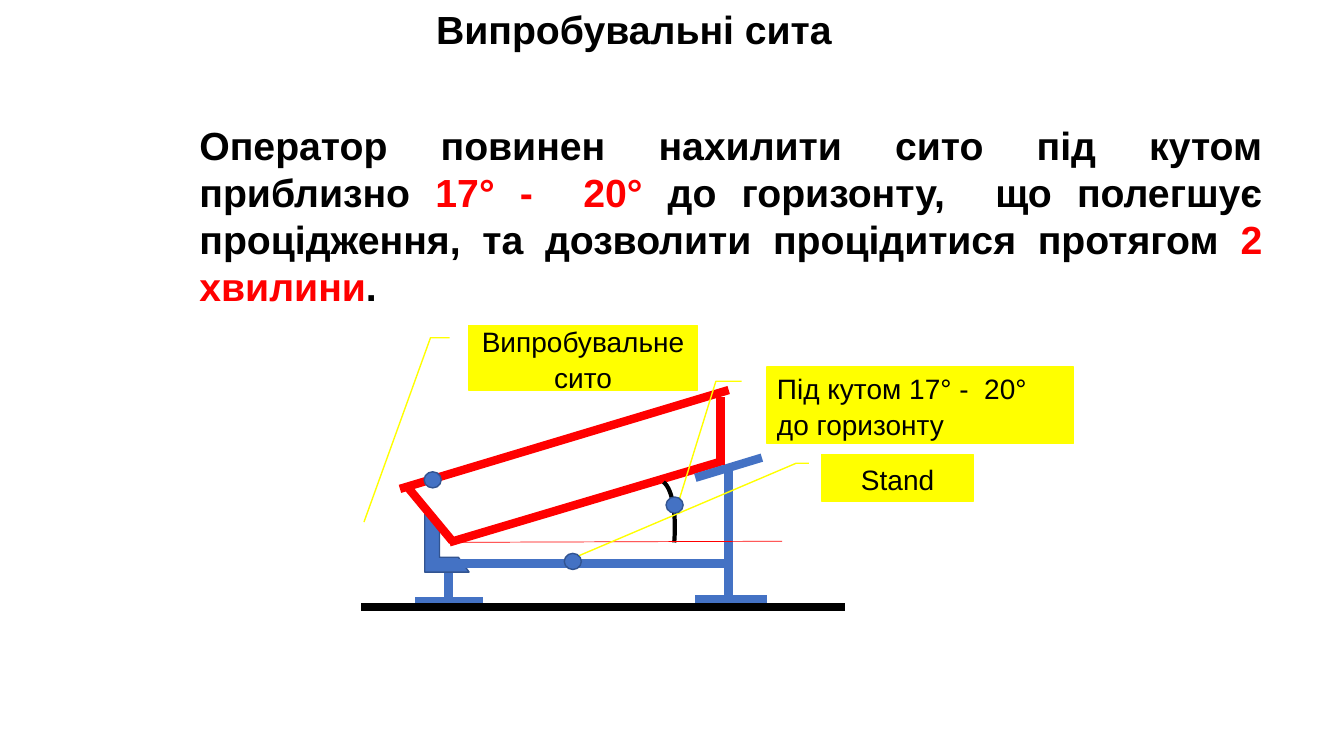
from lxml import etree
from pptx import Presentation
from pptx.dml.color import RGBColor
from pptx.enum import shapes, text
from pptx.oxml.ns import qn
from pptx.util import Pt

BLACK, RED, BLUE, NAVY, YELLOW = "000000", "FF0000", "4472C4", "325491", "FFFF00"
KIND, ALIGN = shapes.MSO_SHAPE, text.PP_ALIGN


def color(value):
    return RGBColor.from_string(value)


def apply_format(target, values):
    for name, value in values.items():
        setattr(target, name, value)


def write(frame, spans, size, bold, values):
    """Fill a text frame with one paragraph of (wording, colour) spans."""
    frame.word_wrap = True
    para = frame.paragraphs[0]
    apply_format(para, values)
    for wording, ink in spans:
        span = para.add_run()
        span.text = wording
        apply_format(span.font, {"name": "Arial", "size": Pt(size), "bold": bold})
        span.font.color.rgb = color(ink)


def add_text(page, box, spans, align):
    label = page.shapes.add_textbox(*map(Pt, box))
    write(label.text_frame, spans, 28, True, {"alignment": align})
    label.text_frame.auto_size = text.MSO_AUTO_SIZE.SHAPE_TO_FIT_TEXT


def add_shape(page, kind, box, fill, line, width=1, turn=0, adjust=()):
    shape = page.shapes.add_shape(kind, *map(Pt, box))
    shape.shadow.inherit = False
    shape.rotation = turn
    for index, value in enumerate(adjust):
        shape.adjustments[index] = value
    if fill:
        shape.fill.solid()
        shape.fill.fore_color.rgb = color(fill)
    else:
        shape.fill.background()
    shape.line.color.rgb = color(line)
    shape.line.width = Pt(width)
    return shape


def add_line(page, origin, ends, ink, width):
    left, top = origin
    x1, y1, x2, y2 = ends
    line = page.shapes.add_connector(
        shapes.MSO_CONNECTOR.STRAIGHT,
        Pt(left + x1), Pt(top + y1), Pt(left + x2), Pt(top + y2))
    line.line.color.rgb = color(ink)
    line.line.width = Pt(width)
    etree.SubElement(line._element.spPr, qn("a:effectLst"))


def add_apparatus(page, origin):
    left, top = origin
    # Bracket under the low end of the sieve
    add_shape(page, KIND.HALF_FRAME, (left + 39.4, top + 92.8, 43.9, 31.7),
              BLUE, NAVY, turn=270)
    # Stand, sieve and table, from back to front
    bars = [
        (BLUE, (69.6, 124.5, 262.6, 124.5)),   # crossbar
        (BLUE, (262.6, 53.9, 262.6, 149)),     # column
        (BLUE, (62.4, 131, 62.4, 149)),        # short leg
        (BLUE, (86.9, 151.1, 38.6, 151.1)),    # left foot
        (BLUE, (289.9, 149.7, 238.8, 149.7)),  # right foot
        (RED, (65.3, 108.6, 34.3, 71.2)),      # sieve, low end
        (RED, (256.8, 51.8, 63.1, 109.4)),     # sieve, underside
        (BLUE, (286.3, 48.9, 238.8, 63.3)),    # sieve rest
        (RED, (256.8, 5.7, 256.8, 53.9)),      # sieve, high end
        (RED, (262.6, 0.6, 27.8, 71.2)),       # sieve, top
        (BLACK, (0, 155.4, 345.4, 155.4)),     # table
    ]
    for ink, ends in bars:
        add_line(page, origin, ends, ink, 6)
    # Tilt angle and horizon
    add_shape(page, KIND.ARC, (left + 189.8, top + 64.7, 33.1, 103.7),
              None, BLACK, 3, 7.7, (163.958, 198.162))
    add_line(page, origin, (65.3, 109.4, 300.7, 108.6), RED, 0.5)


def add_callout(page, box, wording, align, tip):
    callout = add_shape(page, KIND.LINE_CALLOUT_2, box, YELLOW, YELLOW,
                        adjust=(0.188, -0.083, 0.188, -0.167, *tip))
    callout.text_frame.vertical_anchor = text.MSO_ANCHOR.MIDDLE
    write(callout.text_frame, [(wording, BLACK)], 20, False,
          {"alignment": align, "line_spacing": 1.07, "space_after": Pt(8)})


def add_knobs(page, origin):
    left, top = origin
    for x, y in ((145.2, 117.3), (217.9, 77), (45.1, 59)):
        add_shape(page, KIND.FLOWCHART_CONNECTOR,
                  (left + x, top + y, 12.2, 11.5), BLUE, NAVY)


def main():
    deck = Presentation()
    deck.slide_width, deck.slide_height = Pt(960), Pt(540)
    page = deck.slides.add_slide(deck.slide_layouts[6])
    origin = (257.9, 278)

    add_apparatus(page, origin)

    # Instruction
    add_text(page, (135.4, 82.8, 773.3, 143.3), [
        ("Оператор повинен нахилити сито під кутом приблизно ", BLACK),
        ("17° -  20° ", RED),
        ("до горизонту,  що полегшує процідження, та дозволити процідитися протягом ", BLACK),
        ("2 хвилини", RED),
        (".", BLACK),
    ], ALIGN.JUSTIFY)

    # Callouts
    add_callout(page, (334.8, 232.6, 163.4, 46.1), "Випробувальне сито",
                ALIGN.CENTER, (3.045, -0.458))
    add_callout(page, (547.9, 262.1, 218.9, 54.7), "Під кутом 17° -  20° до горизонту",
                ALIGN.LEFT, (1.893, -0.299))
    add_callout(page, (586.8, 324.7, 108.7, 33.1), "Stand",
                ALIGN.CENTER, (2.289, -1.67))

    # Title
    add_text(page, (272.9, 0, 360, 41), [("Випробувальні сита", BLACK)], ALIGN.CENTER)

    add_knobs(page, origin)
    deck.save("out.pptx")


if __name__ == "__main__":
    main()
